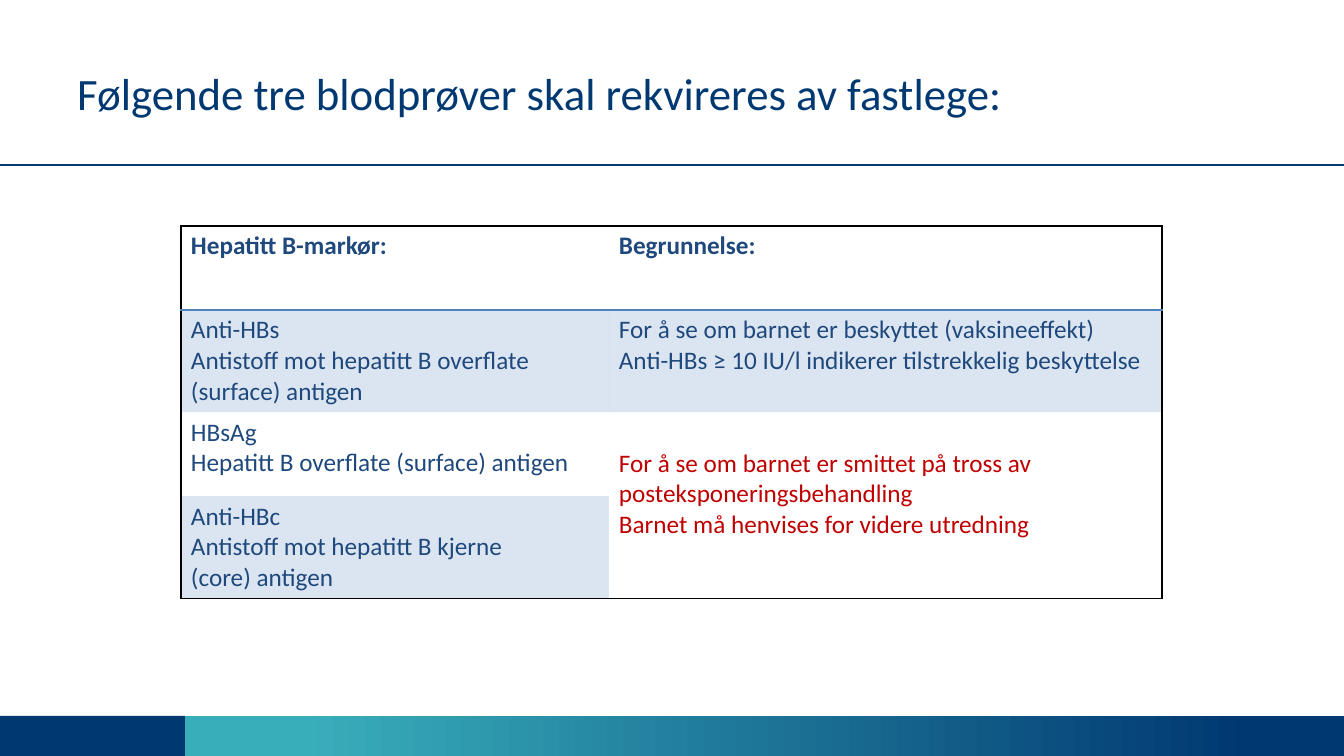
from lxml.etree import SubElement
from pptx import Presentation
from pptx.dml.color import RGBColor
from pptx.enum.shapes import MSO_CONNECTOR, MSO_SHAPE
from pptx.enum.text import MSO_ANCHOR, PP_ALIGN
from pptx.oxml.ns import qn
from pptx.util import Pt

COLORS = {"navy": "003871", "teal": "39AEBB", "text": "1F497D",
          "red": "C00000", "band": "4F81BD", "black": "000000"}
FONT = "Calibri"


def px(n):
    return round(n * 914400 / 100.8)


def rgb(name):
    return RGBColor.from_string(COLORS[name])


prs = Presentation()
prs.slide_width, prs.slide_height = px(1344), px(756)
s = prs.slides.add_slide(prs.slide_layouts[5])

# Footer bars
for left, width in ((185, 1159), (0, 185)):
    sp = s.shapes.add_shape(MSO_SHAPE.RECTANGLE, px(left), px(716), px(width), px(40))
    sp.shadow.inherit = False
    sp.line.fill.background()
    if left:
        sp.fill.gradient()
        sp.fill.gradient_angle = 0
        for stop, (pos, color) in zip(sp.fill.gradient_stops, ((0.1, "teal"), (0.92, "navy"))):
            stop.position = pos
            stop.color.rgb = rgb(color)
    else:
        sp.fill.solid()
        sp.fill.fore_color.rgb = rgb("navy")

# Rule under the title
rule = s.shapes.add_connector(MSO_CONNECTOR.STRAIGHT, 0, px(165), px(1344), px(165))
rule.line.width = Pt(2)
rule.line.color.rgb = rgb("navy")
SubElement(rule.element.spPr, qn("a:effectLst"))

# Title
title = s.shapes.title
title.left, title.top, title.width, title.height = px(67), px(30), px(1210), px(126)
tf = title.text_frame
tf.text = "Følgende tre blodprøver skal rekvireres av fastlege:"
tf.vertical_anchor = MSO_ANCHOR.MIDDLE
p = tf.paragraphs[0]
p.alignment = PP_ALIGN.LEFT
p.font.name, p.font.size = FONT, Pt(32)
p.font.color.rgb = rgb("navy")

# Table of markers and reasons
rows = [
    ("Hepatitt B-markør:", "Begrunnelse:"),
    ("Anti-HBs\nAntistoff mot hepatitt B overflate (surface) antigen",
     "For å se om barnet er beskyttet (vaksineeffekt)\n"
     "Anti-HBs ≥ 10 IU/l indikerer tilstrekkelig beskyttelse"),
    ("HBsAg\nHepatitt B overflate (surface) antigen",
     "For å se om barnet er smittet på tross av posteksponeringsbehandling\n"
     "Barnet må henvises for videre utredning"),
    ("Anti-HBc\nAntistoff mot hepatitt B kjerne\n(core) antigen", ""),
]
heights = (84, 102, 84, 102)
frame = s.shapes.add_table(4, 2, px(181), px(226), px(981), px(sum(heights)))
frame.element.find(".//" + qn("a:tableStyleId")).text = "{2D5ABB26-0587-4C30-8999-92F81FD0307C}"
table = frame.table
table.first_row = table.horz_banding = False
for column, width in zip(table.columns, (428, 553)):
    column.width = px(width)
for row, height in zip(table.rows, heights):
    row.height = px(height)
table.cell(2, 1).merge(table.cell(3, 1))

for i, texts in enumerate(rows):
    for j, text in enumerate(texts):
        cell = table.cell(i, j)
        reason = (i, j) == (2, 1)
        if text:
            cell.text = text
            for p in cell.text_frame.paragraphs:
                p.font.name, p.font.size, p.font.bold = FONT, Pt(18), i == 0
                p.font.color.rgb = rgb("red" if reason else "text")
        cell.margin_left = cell.margin_right = px(10)
        cell.margin_top, cell.margin_bottom = px(36 if reason else 5), px(5)

        # Outer frame and header line
        edges = {"a:lnR" if j else "a:lnL": "black"}
        if i == 0:
            edges.update({"a:lnT": "black", "a:lnB": "band"})
        if i == 3 or reason:
            edges["a:lnB"] = "black"
        tcPr = cell._tc.get_or_add_tcPr()
        for edge, color in edges.items():
            ln = SubElement(tcPr, qn(edge), w=str(Pt(1)))
            SubElement(SubElement(ln, qn("a:solidFill")), qn("a:srgbClr"), val=COLORS[color])

        # Light band
        if i == 1 or (i, j) == (3, 0):
            cell.fill.solid()
            cell.fill.fore_color.rgb = rgb("band")
            fill = tcPr.find(qn("a:solidFill"))
            SubElement(fill[0], qn("a:alpha"), val="20000")
        else:
            cell.fill.background()

prs.save("out.pptx")
